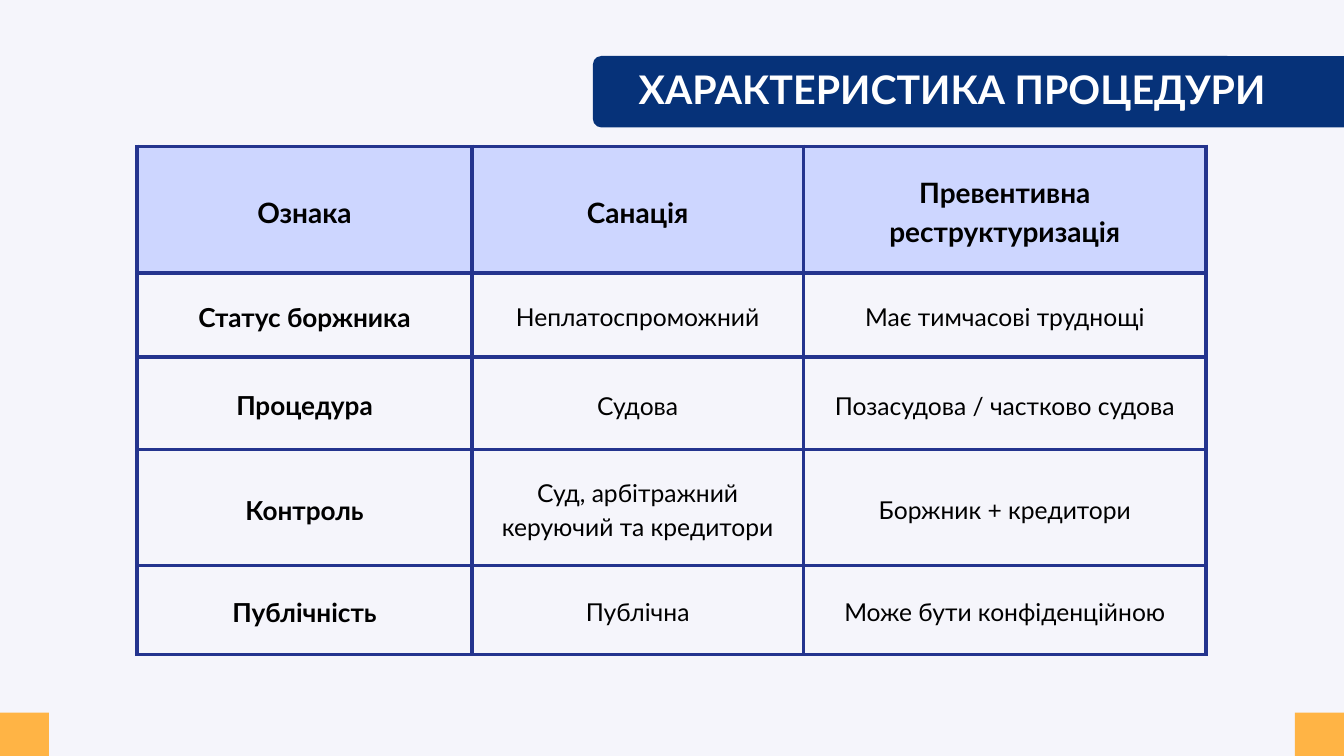
import dataclasses

import lxml.etree
import pptx
import pptx.dml.color
import pptx.enum.shapes
import pptx.enum.text
import pptx.oxml.ns
import pptx.util

EMU_PER_PX = 9525
SLIDE_WIDTH, SLIDE_HEIGHT = 1920, 1080
COLUMN_WIDTHS = (478, 474, 575)
ROW_HEIGHTS = (181, 120, 132, 166, 127)
TITLE = "ХАРАКТЕРИСТИКА ПРОЦЕДУРИ"
COMPARISON = (
    ("Ознака", "Санація", "Превентивна реструктуризація"),
    ("Статус боржника", "Неплатоспроможний", "Має тимчасовi труднощi"),
    ("Процедура", "Судова", "Позасудова / частково судова"),
    ("Контроль", "Суд, арбiтражний керуючий та кредитори", "Боржник + кредитори"),
    ("Публiчнiсть", "Публiчна", "Може бути конфiденцiйною"),
)


@dataclasses.dataclass(frozen=True)
class TextStyle:
    """Size, line spacing, weight and colour of a kind of text."""
    size: float
    spacing: float
    bold: bool
    color: str = "000000"


@dataclasses.dataclass(frozen=True)
class Theme:
    """Colours and type styles of the slide."""
    font: str = "Lato"
    background: str = "F5F5FB"
    banner: str = "063279"
    accent: str = "FFB445"
    header_fill: str = "CDD6FF"
    border: str = "24348E"
    border_width: float = 4.39
    title: TextStyle = TextStyle(42.2, 46.4, True, "FFFFFF")
    header: TextStyle = TextStyle(30, 42, True)
    label: TextStyle = TextStyle(28, 39.2, True)
    body: TextStyle = TextStyle(26.4, 36.9, False)


THEME = Theme()


def px(*lengths):
    """Turn pixel lengths into a list of EMU lengths."""
    return [pptx.util.Emu(length * EMU_PER_PX) for length in lengths]


def paint(fill, color):
    """Give a fill one solid colour."""
    fill.solid()
    fill.fore_color.rgb = pptx.dml.color.RGBColor.from_string(color)


def write(text_frame, text, style):
    """Write one centred paragraph in the given style."""
    text_frame.word_wrap = True
    text_frame.text = text
    paragraph = text_frame.paragraphs[0]
    paragraph.alignment = pptx.enum.text.PP_ALIGN.CENTER
    paragraph.line_spacing = pptx.util.Pt(style.spacing)
    for run in paragraph.runs:
        run.font.name = THEME.font
        run.font.size = pptx.util.Pt(style.size)
        run.font.bold = style.bold
        run.font.color.rgb = pptx.dml.color.RGBColor.from_string(style.color)


def add_block(slide, preset, box, color):
    """Add a flat filled shape without an outline."""
    shape = slide.shapes.add_shape(preset, *px(*box))
    shape.shadow.inherit = False
    shape.line.fill.background()
    paint(shape.fill, color)
    return shape


def add_banner(slide, box):
    """Add the title banner that runs past the right edge."""
    left, top, width, height = box
    rounded = pptx.enum.shapes.MSO_SHAPE.ROUNDED_RECTANGLE
    banner = add_block(slide, rounded, box, THEME.banner)
    banner.adjustments[0] = 12 / height
    title = slide.shapes.add_textbox(*px(left, top + 19, 1027, 62))
    frame = title.text_frame
    frame.margin_left = frame.margin_right = frame.margin_top = frame.margin_bottom = 0
    write(frame, TITLE, THEME.title)


def add_corners(slide, box):
    """Add an accent block at each end of the given strip."""
    left, top, width, height = box
    block_width = 70
    for block_left in (left, left + width - block_width):
        add_block(slide, pptx.enum.shapes.MSO_SHAPE.RECTANGLE,
                  (block_left, top, block_width, height), THEME.accent)


def add_borders(cell):
    """Draw the same solid border on all four sides of a cell."""
    properties = cell._tc.get_or_add_tcPr()
    qualify = pptx.oxml.ns.qn
    for index, side in enumerate(("lnL", "lnR", "lnT", "lnB")):
        line = lxml.etree.Element(qualify(f"a:{side}"))
        line.set("w", str(pptx.util.Pt(THEME.border_width)))
        solid = lxml.etree.SubElement(line, qualify("a:solidFill"))
        lxml.etree.SubElement(solid, qualify("a:srgbClr")).set("val", THEME.border)
        properties.insert(index, line)


def format_cell(cell, text, style, is_header):
    """Fill in a table cell with its text, margins, fill and borders."""
    margin, = px(29)
    cell.margin_left = cell.margin_right = margin
    cell.margin_top = cell.margin_bottom = margin
    cell.vertical_anchor = pptx.enum.text.MSO_ANCHOR.MIDDLE
    write(cell.text_frame, text, style)
    if is_header:
        paint(cell.fill, THEME.header_fill)
    else:
        cell.fill.background()
    add_borders(cell)


def add_comparison(slide, box):
    """Add the table that compares the two procedures."""
    frame = slide.shapes.add_table(len(ROW_HEIGHTS), len(COLUMN_WIDTHS), *px(*box))
    table = frame.table
    table.horz_banding = False
    for column, width in zip(table.columns, px(*COLUMN_WIDTHS)):
        column.width = width
    for row, height in zip(table.rows, px(*ROW_HEIGHTS)):
        row.height = height
    for row_index, texts in enumerate(COMPARISON):
        for column_index, text in enumerate(texts):
            is_header = row_index == 0
            style = THEME.label if column_index == 0 else THEME.body
            format_cell(table.cell(row_index, column_index), text,
                        THEME.header if is_header else style, is_header)


def main():
    """Build and save the slide."""
    presentation = pptx.Presentation()
    presentation.slide_width, presentation.slide_height = px(SLIDE_WIDTH, SLIDE_HEIGHT)
    slide = presentation.slides.add_slide(presentation.slide_layouts[6])
    paint(slide.background.fill, THEME.background)
    add_comparison(slide, (196, 209, sum(COLUMN_WIDTHS), sum(ROW_HEIGHTS)))
    add_banner(slide, (847, 80, 1342, 102))
    add_corners(slide, (0, 1018, SLIDE_WIDTH, 62))
    presentation.save("out.pptx")


if __name__ == "__main__":
    main()
